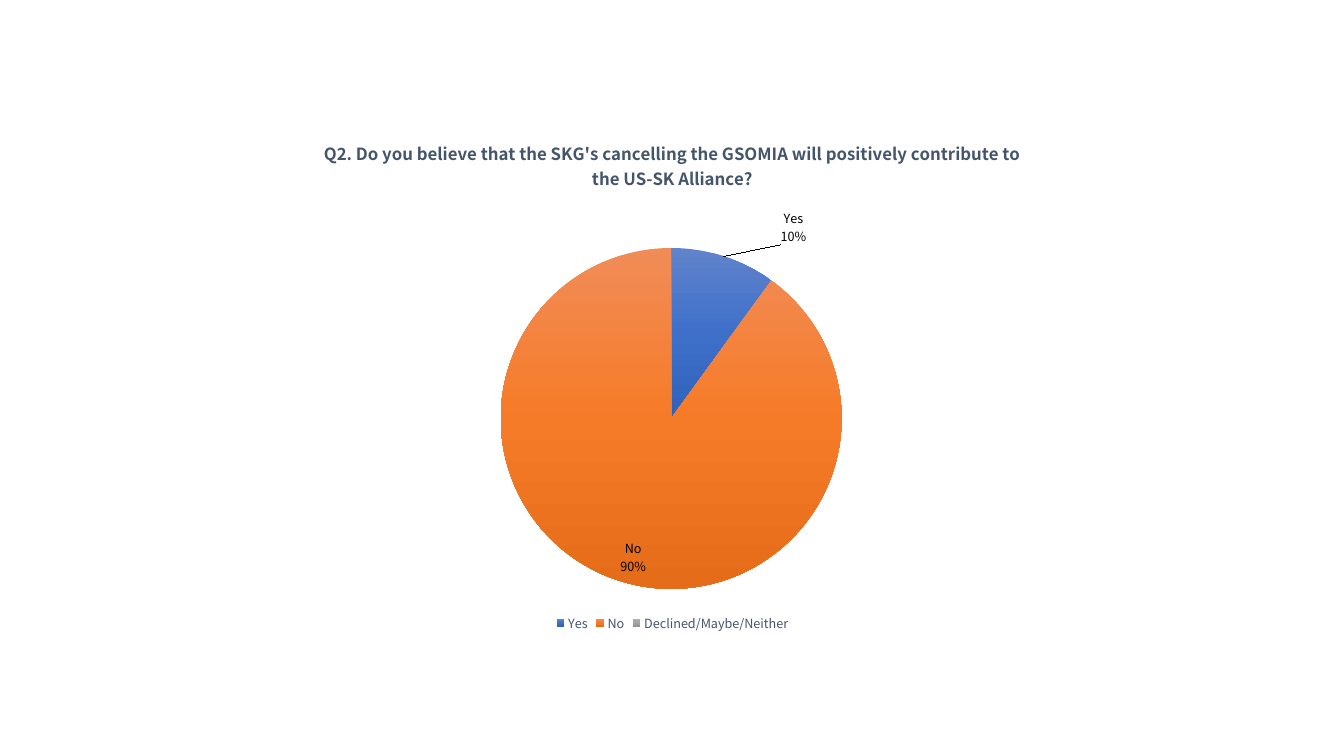
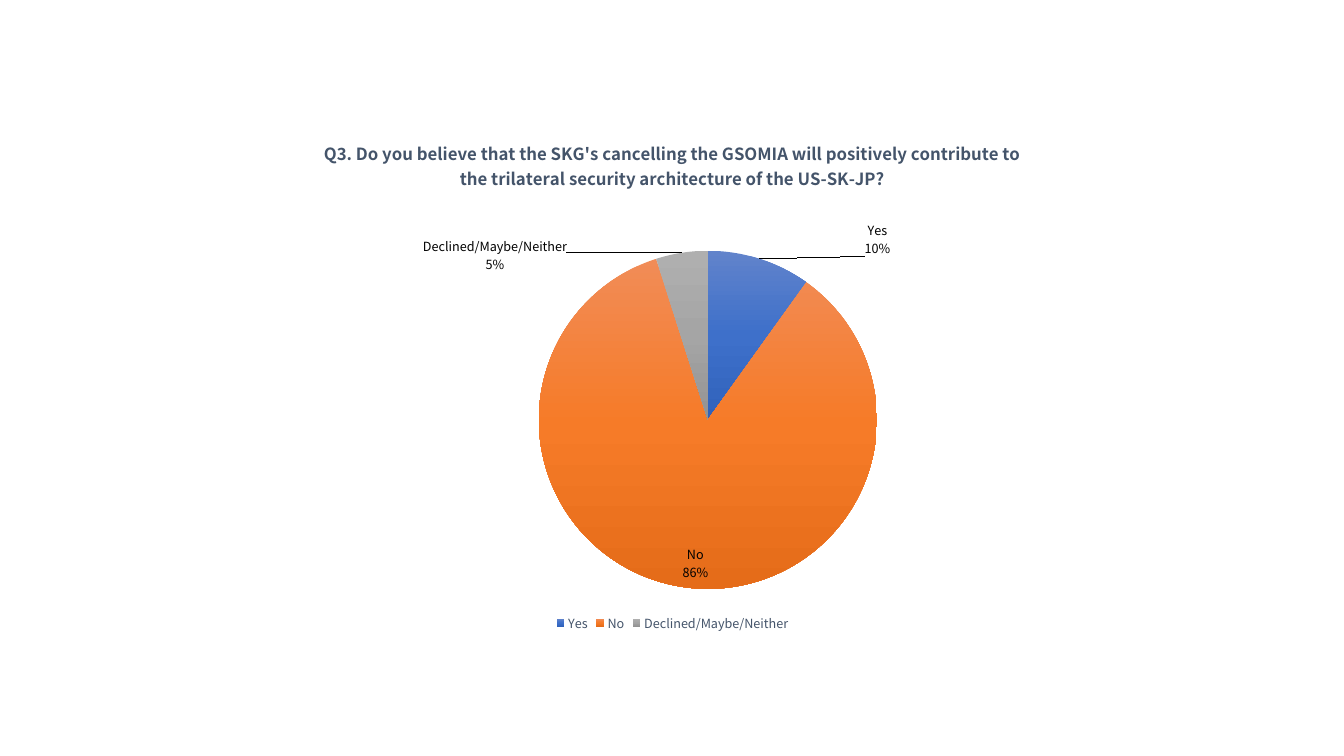
"""Two survey slides, each with one pie chart of the answers."""
import copy

import pptx
import pptx.chart.data
import pptx.dml.color
import pptx.enum.chart
import pptx.oxml
import pptx.oxml.ns
import pptx.util
from pptx.util import Cm

FONT = "Noto Sans CJK KR"
COLORS = {"ink": "000000", "slate": "44546A"}
ANSWERS = {
    "Yes": ("6183CB", "3E70CA", "3062BB"),
    "No": ("F18C57", "F67B28", "E56C19"),
    "Declined/Maybe/Neither": ("AFAFAF", "A5A5A5", "939393"),
}
STEM = "Do you believe that the SKG's cancelling the GSOMIA will positively contribute to"
QUESTIONS = [
    {
        "title": f"Q2. {STEM} the US-SK Alliance?",
        "shares": (10, 90, 0),
        "pie": (Cm(12.62), Cm(6.25), Cm(8.59)),
        "callouts": {0: (Cm(1.39), Cm(-0.15))},
    },
    {
        "title": f"Q3. {STEM} the trilateral security architecture of the US-SK-JP?",
        "shares": (10, 86, 5),
        "pie": (Cm(13.58), Cm(6.32), Cm(8.52)),
        "callouts": {0: (Cm(2.6), Cm(0.08)), 2: (Cm(-2.87), Cm(0.65))},
    },
]
LEFT, TOP, WIDTH, HEIGHT = Cm(5.44), Cm(3.02), Cm(23.01), Cm(13)


def rgb(value):
    return pptx.dml.color.RGBColor.from_string(value)


def style_font(font, size=9, color="ink", bold=False):
    font.name = FONT
    font.size = pptx.util.Pt(size)
    font.bold = bold
    font.color.rgb = rgb(COLORS[color])


def write_text(frame, text, **style):
    run = frame.paragraphs[0].add_run()
    run.text = text
    style_font(run.font, **style)


def chart_xml(tag, content=""):
    namespace = pptx.oxml.ns.nsdecls("c")
    return pptx.oxml.parse_xml(f"<c:{tag} {namespace}>{content}</c:{tag}>")


def manual_layout(**settings):
    content = "".join(f'<c:{tag} val="{value}"/>' for tag, value in settings.items())
    return chart_xml("layout", f"<c:manualLayout>{content}</c:manualLayout>")


def place_pie(chart, left, top, size):
    plot_area = chart._chartSpace.xpath("c:chart/c:plotArea")[0]
    for layout in plot_area.xpath("c:layout"):
        plot_area.remove(layout)
    plot_area.insert(0, manual_layout(
        layoutTarget="inner", xMode="edge", yMode="edge",
        x=(left - LEFT) / WIDTH, y=(top - TOP) / HEIGHT,
        w=size / WIDTH, h=size / HEIGHT))


def color_slices(series):
    for index, shades in enumerate(ANSWERS.values()):
        slice_format = series.points[index].format
        slice_format.line.fill.background()
        slice_format.fill.gradient()
        slice_format.fill.gradient_angle = 270
        stops = series._element.xpath(f"c:dPt[c:idx/@val='{index}']//a:gsLst")[0]
        stops.append(copy.deepcopy(stops[0]))
        for step, (stop, shade) in enumerate(zip(slice_format.fill.gradient_stops, shades)):
            stop.position = step / 2
            stop.color.rgb = rgb(shade)


def label_slices(series, shares, callouts):
    labels = series.data_labels
    labels.show_value = True
    labels.show_category_name = True
    labels.number_format = '0"%"'
    labels.number_format_is_linked = False
    labels.position = pptx.enum.chart.XL_LABEL_POSITION.INSIDE_END
    style_font(labels.font)
    group = labels._element
    group.xpath("c:showBubbleSize")[0].addnext(chart_xml("separator", "\n"))
    shared = [part for part in group if not part.tag.endswith("eaderLines")]
    special = []
    for index, share in enumerate(shares):
        label = chart_xml("dLbl", f'<c:idx val="{index}"/>')
        if not share:
            label.append(pptx.oxml.parse_xml(
                f'<c:delete {pptx.oxml.ns.nsdecls("c")} val="1"/>'))
        elif index in callouts:
            across, down = callouts[index]
            label.append(manual_layout(x=across / WIDTH, y=down / HEIGHT))
            label.extend(copy.deepcopy(part) for part in shared)
            label.xpath("c:dLblPos")[0].set("val", "outEnd")
        else:
            continue
        special.append(label)
    for position, label in enumerate(special):
        group.insert(position, label)


def add_question(slide, title, shares, pie, callouts):
    answers = pptx.chart.data.CategoryChartData()
    answers.categories = list(ANSWERS)
    answers.add_series(title, shares)
    chart = slide.shapes.add_chart(
        pptx.enum.chart.XL_CHART_TYPE.PIE, LEFT, TOP, WIDTH, HEIGHT, answers).chart
    style_font(chart.font, size=10)
    chart.has_title = True
    write_text(chart.chart_title.text_frame, title, size=12, color="slate", bold=True)
    chart.has_legend = True
    chart.legend.position = pptx.enum.chart.XL_LEGEND_POSITION.BOTTOM
    chart.legend.include_in_layout = False
    style_font(chart.legend.font, color="slate")
    plot = chart.plots[0]
    plot.vary_by_categories = True
    place_pie(chart, *pie)
    color_slices(plot.series[0])
    label_slices(plot.series[0], shares, callouts)


def main():
    deck = pptx.Presentation()
    deck.slide_width, deck.slide_height = Cm(33.87), Cm(19.05)
    for question in QUESTIONS:
        add_question(deck.slides.add_slide(deck.slide_layouts[6]), **question)
    deck.save("out.pptx")


if __name__ == "__main__":
    main()
